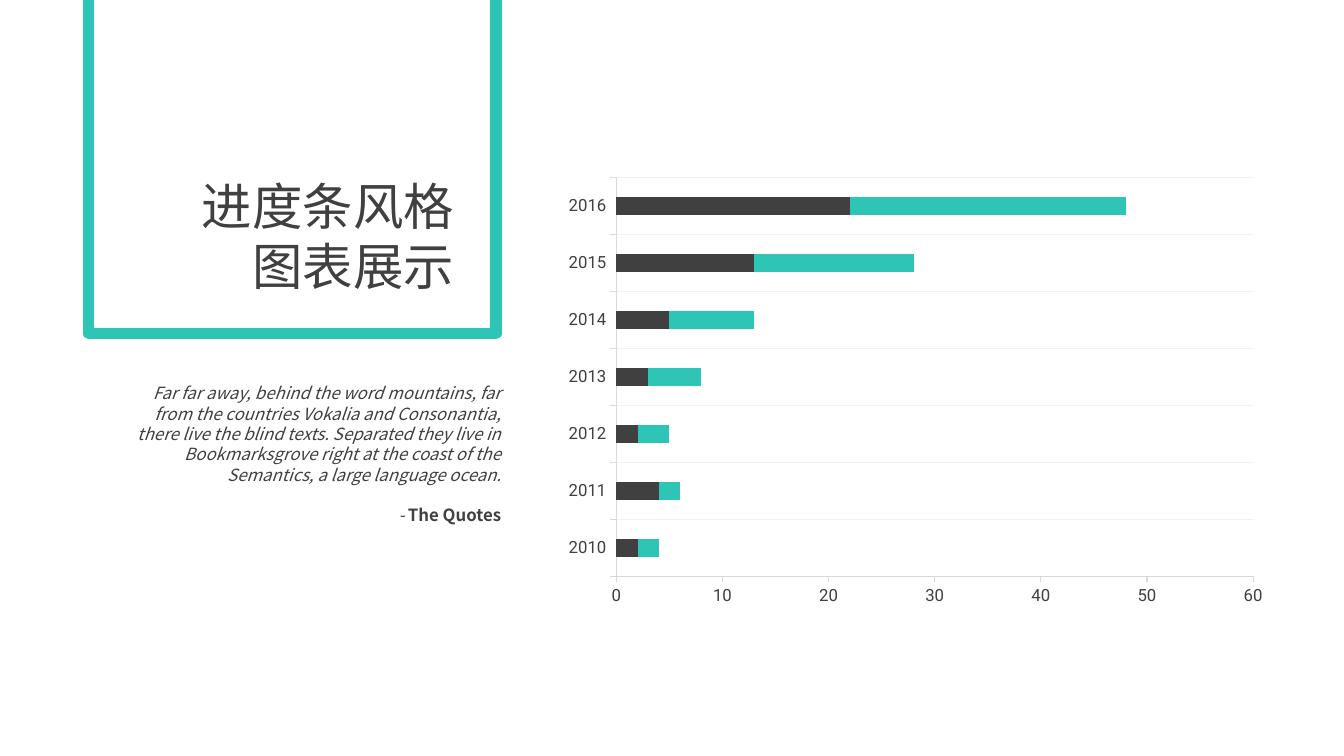
"""Build a slide with a framed title, a quotation and a stacked bar chart."""
from lxml.etree import SubElement
from pptx import Presentation
from pptx.chart.data import CategoryChartData
from pptx.dml.color import RGBColor
from pptx.enum.chart import XL_CHART_TYPE as ChartType, XL_TICK_MARK as TickMark
from pptx.enum.shapes import MSO_SHAPE as Preset
from pptx.enum.text import MSO_AUTO_SIZE as AutoSize, PP_ALIGN as Align
from pptx.oxml.ns import qn
from pptx.util import Inches, Pt

DARK, TEAL, AXIS, GRID = "404040", "2EC4B6", "D9D9D9", "F2F2F2"
TEXT_FONT, CHART_FONT = "Noto Sans CJK SC", "Roboto"

YEARS = ["2010", "2011", "2012", "2013", "2014", "2015", "2016"]
SERIES = [
    ("Series 1", (2, 4, 2, 3, 5, 13, 22), DARK),
    ("Series 2", (2, 2, 3, 5, 8, 15, 26), TEAL),
]
CHART_BOX = (5.64, 1.55, 6.9, 4.64)
PLOT = {"x": 0.067, "y": 0.045, "w": 0.917, "h": 0.853}
FRAME_BOX = (0.88, -0.73, 4.04, 4.04)

QUOTE = (
    "Far far away, behind the word mountains, far from the countries Vokalia "
    "and Consonantia, there live the blind texts. Separated they live in "
    "Bookmarksgrove right at the coast of the Semantics, a large language ocean."
)
TEXTS = [
    {
        "box": (1.9, 1.69, 2.7, 1.34), "wrap": False, "size": 36, "pitch": 43, "gap": 0,
        "paragraphs": [[("进度条风格", {})], [("图表展示", {})]],
    },
    {
        "box": (1.22, 3.75, 3.85, 1.51), "wrap": True, "size": 12, "pitch": 14.5, "gap": 14.5,
        "paragraphs": [
            [(QUOTE, {"italic": True})],
            [("- ", {"italic": True}), ("The Quotes", {"bold": True})],
        ],
    },
]


def color(value):
    return RGBColor.from_string(value)


def apply(target, values):
    for name, value in values.items():
        setattr(target, name, value)


def style_font(font, name, size, **extra):
    apply(font, {"name": name, "size": Pt(size), **extra})
    font.color.rgb = color(DARK)


def style_line(line, value, width):
    line.color.rgb = color(value)
    line.width = Pt(width)


def add_text(slide, text):
    frame = slide.shapes.add_textbox(*map(Inches, text["box"])).text_frame
    apply(frame, {"word_wrap": text["wrap"], "auto_size": AutoSize.SHAPE_TO_FIT_TEXT})
    for index, runs in enumerate(text["paragraphs"]):
        paragraph = frame.add_paragraph() if index else frame.paragraphs[0]
        apply(paragraph, {
            "alignment": Align.RIGHT,
            "line_spacing": Pt(text["pitch"]),
            "space_before": Pt(text["gap"] if index else 0),
        })
        for content, emphasis in runs:
            run = paragraph.add_run()
            run.text = content
            style_font(run.font, TEXT_FONT, text["size"], **emphasis)
            SubElement(run.font._element, qn("a:ea"), typeface=TEXT_FONT)


def set_plot_layout(chart):
    plot_area = chart._chartSpace.chart.plotArea
    layout = plot_area.find(qn("c:layout"))
    if layout is None:
        layout = SubElement(plot_area, qn("c:layout"))
        plot_area.insert(0, layout)
    manual = SubElement(layout, qn("c:manualLayout"))
    settings = {"layoutTarget": "inner", "xMode": "edge", "yMode": "edge", **PLOT}
    for name, value in settings.items():
        SubElement(manual, qn(f"c:{name}"), val=str(value))


def add_bar_chart(slide):
    data = CategoryChartData()
    data.categories = YEARS
    for name, values, _ in SERIES:
        data.add_series(name, values)
    chart = slide.shapes.add_chart(
        ChartType.BAR_STACKED, *map(Inches, CHART_BOX), data
    ).chart
    apply(chart, {"has_legend": False, "has_title": False})
    style_font(chart.font, CHART_FONT, 12)
    plot = chart.plots[0]
    apply(plot, {"gap_width": 219, "overlap": 100, "vary_by_categories": False})
    for series, (_, _, fill) in zip(plot.series, SERIES):
        series.format.fill.solid()
        series.format.fill.fore_color.rgb = color(fill)
    for axis in (chart.category_axis, chart.value_axis):
        apply(axis, {"major_tick_mark": TickMark.OUTSIDE, "minor_tick_mark": TickMark.NONE})
        style_font(axis.tick_labels.font, CHART_FONT, 12)
        style_line(axis.format.line, AXIS, 0.75)
    apply(chart.value_axis, {
        "minimum_scale": 0, "maximum_scale": 60, "major_unit": 10,
        "has_major_gridlines": False,
    })
    chart.category_axis.has_major_gridlines = True
    style_line(chart.category_axis.major_gridlines.format.line, GRID, 0.75)
    set_plot_layout(chart)


def add_frame(slide):
    shape = slide.shapes.add_shape(Preset.RECTANGLE, *map(Inches, FRAME_BOX))
    shape.shadow.inherit = False
    shape.fill.background()
    style_line(shape.line, TEAL, 8)


def main():
    presentation = Presentation()
    apply(presentation, {"slide_width": Inches(13.33), "slide_height": Inches(7.5)})
    slide = presentation.slides.add_slide(presentation.slide_layouts[6])
    add_bar_chart(slide)
    for text in TEXTS:
        add_text(slide, text)
    add_frame(slide)
    presentation.save("out.pptx")


if __name__ == "__main__":
    main()
